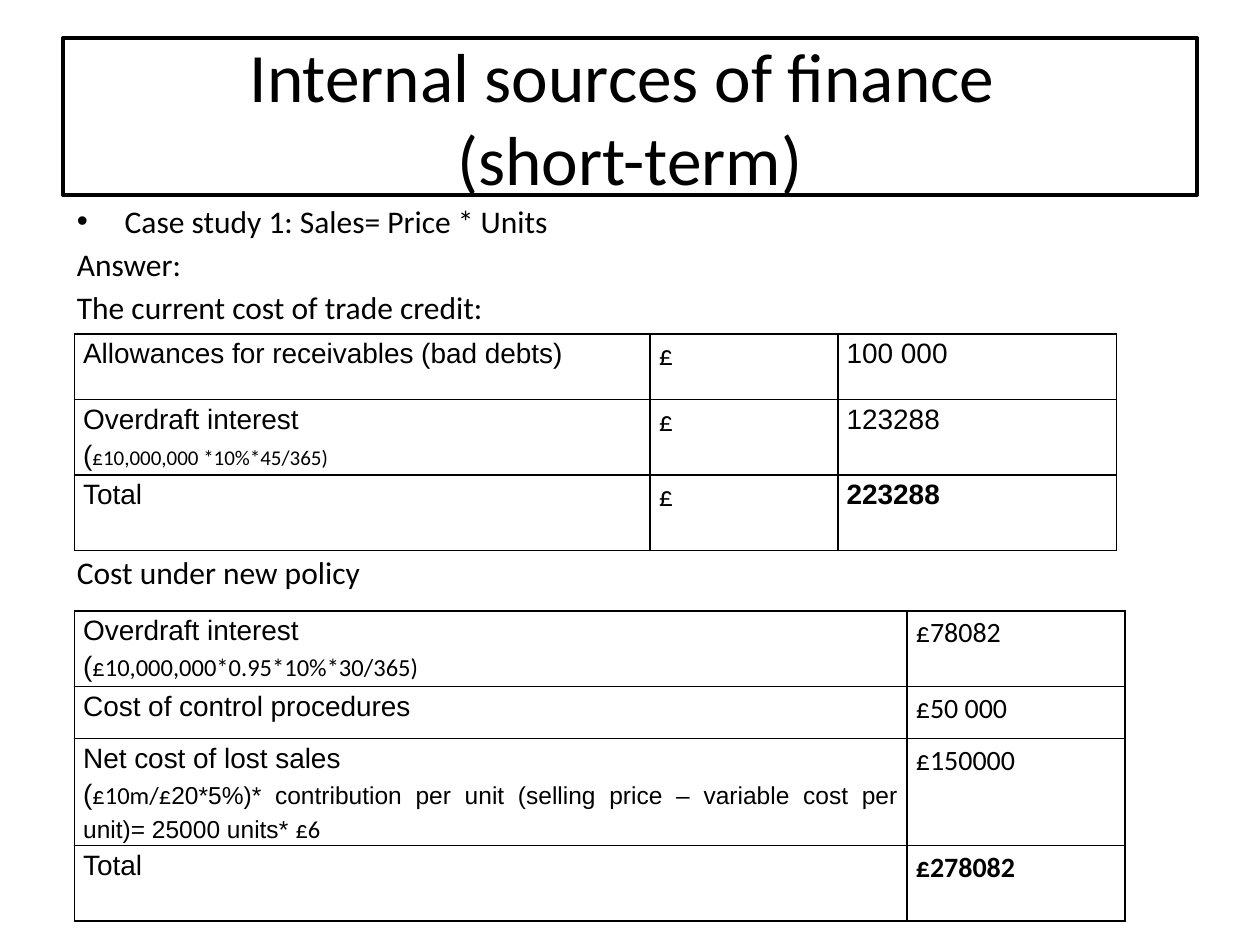
"""Build a slide comparing the cost of trade credit under the current and the new policy."""
from dataclasses import dataclass

import lxml.etree
import pptx
import pptx.dml.color
import pptx.enum.text
import pptx.oxml.ns
import pptx.util

GRID_COLUMNS, GRID_ROWS = 100, 75
CELL = pptx.util.Inches(0.1)
ALIGN = pptx.enum.text.PP_ALIGN
ANCHOR = pptx.enum.text.MSO_ANCHOR


@dataclass(frozen=True)
class Theme:
    ink: str = "000000"
    paper: str = "FFFFFF"
    body_font: str = "Calibri"
    label_font: str = "Arial"
    title_size: float = 39.6
    body_size: float = 18
    cell_size: float = 16
    note_size: float = 14
    small_size: float = 12
    frame_width: float = 2
    border_width: float = 1


THEME = Theme()


@dataclass(frozen=True)
class Area:
    left: float
    top: float
    width: float
    height: float


@dataclass(frozen=True)
class Span:
    text: str
    font: str = THEME.label_font
    size: float = THEME.cell_size
    bold: bool = False


@dataclass(frozen=True)
class BodyLine:
    text: str
    space_before: float = 3.2
    bullet: bool = False


@dataclass(frozen=True)
class CostTable:
    left: float
    top: float
    columns: tuple
    rows: tuple
    cells: tuple


def label(text: str, *notes: Span) -> tuple:
    """Return the lines of a label cell, with an optional bracketed working."""
    first = (Span(text),)
    return (first, (Span("("), *notes)) if notes else (first,)


def amount(text: str, font: str = THEME.body_font, bold: bool = False) -> tuple:
    """Return the single line of an amount cell."""
    return ((Span(text, font, bold=bold),),)


def note(text: str, font: str = THEME.body_font, size: float = THEME.note_size) -> Span:
    """Return a piece of a working."""
    return Span(text, font, size)


TITLE = "Internal sources of finance \v(short-term)"
TITLE_AREA = Area(5, 3, 90, 12.5)
BODY_AREA = Area(5.1, 15.5, 90, 49.5)
BODY = (
    BodyLine("Case study 1: Sales= Price * Units", bullet=True),
    BodyLine("Answer:"),
    BodyLine("The current cost of trade credit:"),
    BodyLine("Cost under new policy", space_before=129.4),
)
CURRENT_POLICY = CostTable(5.9, 26.5, (45.7, 14.9, 22.1), (5.2, 6, 6), (
    (label("Allowances for receivables (bad debts)"), amount("£"),
     amount("100 000", THEME.label_font)),
    (label("Overdraft interest ", note("£10,000,000 *10%*45/365)", size=THEME.small_size)),
     amount("£"), amount("123288", THEME.label_font)),
    (label("Total"), amount("£"), amount("223288", THEME.label_font, bold=True)),
))
NEW_POLICY = CostTable(5.9, 48.5, (66.1, 17.3), (6, 4.1, 8.5, 6), (
    (label("Overdraft interest ", note("£10,000,000*0.95*10%*30/365)")), amount("£78082")),
    (label("Cost of control procedures"), amount("£50 000")),
    (label("Net cost of lost sales ", note("£10m/£"),
           note("20*5%)* contribution per unit (selling price – variable cost per unit)"
                "= 25000 units* ", THEME.label_font),
           note("£6")), amount("£150000")),
    (label("Total"), amount("£278082", bold=True)),
))


def grid(count: float) -> int:
    """Convert grid columns or rows to a length."""
    return int(count * CELL)


def place(shape, area: Area) -> None:
    """Move a shape to an area of the grid."""
    shape.left, shape.top = grid(area.left), grid(area.top)
    shape.width, shape.height = grid(area.width), grid(area.height)


def write(para, text: str, *, font: str = THEME.body_font, size: float = THEME.body_size,
          bold: bool = False, color: str = THEME.ink) -> None:
    """Add formatted text to a paragraph, breaking the line at vertical tabs."""
    for number, part in enumerate(text.split("\v")):
        if number:
            para.add_line_break()
        span = para.add_run()
        span.text = part
        span.font.name, span.font.size, span.font.bold = font, pptx.util.Pt(size), bold
        span.font.color.rgb = pptx.dml.color.RGBColor.from_string(color)


def paragraphs(frame, count: int) -> list:
    """Return the given number of paragraphs of a text frame."""
    return [frame.paragraphs[0]] + [frame.add_paragraph() for _ in range(count - 1)]


def draw_title(title) -> None:
    """Fill and frame the title placeholder."""
    place(title, TITLE_AREA)
    title.fill.solid()
    title.fill.fore_color.rgb = pptx.dml.color.RGBColor.from_string(THEME.paper)
    title.line.color.rgb = pptx.dml.color.RGBColor.from_string(THEME.ink)
    title.line.width = pptx.util.Pt(THEME.frame_width)
    frame = title.text_frame
    frame.auto_size = pptx.enum.text.MSO_AUTO_SIZE.NONE
    frame.vertical_anchor = ANCHOR.MIDDLE
    para = frame.paragraphs[0]
    para.alignment = ALIGN.CENTER
    write(para, TITLE, size=THEME.title_size)


def draw_body(body) -> None:
    """Write the lines of the body placeholder."""
    place(body, BODY_AREA)
    frame = body.text_frame
    frame.auto_size = pptx.enum.text.MSO_AUTO_SIZE.NONE
    for para, line in zip(paragraphs(frame, len(BODY)), BODY):
        para.space_before = pptx.util.Pt(line.space_before)
        write(para, line.text)
        properties = para._p.get_or_add_pPr()
        properties.set("marL", str(grid(3.8)))
        properties.set("indent", str(-grid(3.8)))
        kind = "a:buChar" if line.bullet else "a:buNone"
        mark = lxml.etree.SubElement(properties, pptx.oxml.ns.qn(kind))
        if line.bullet:
            mark.set("char", "•")


def draw_borders(cell) -> None:
    """Rule all four sides of a table cell."""
    properties = cell._tc.get_or_add_tcPr()
    for index, side in enumerate(("a:lnL", "a:lnR", "a:lnT", "a:lnB")):
        border = lxml.etree.Element(pptx.oxml.ns.qn(side))
        border.set("w", str(pptx.util.Pt(THEME.border_width)))
        fill = lxml.etree.SubElement(border, pptx.oxml.ns.qn("a:solidFill"))
        lxml.etree.SubElement(fill, pptx.oxml.ns.qn("a:srgbClr")).set("val", THEME.ink)
        properties.insert(index, border)


def draw_cell(cell, lines: tuple) -> None:
    """Format a table cell and write its lines."""
    cell.fill.background()
    cell.margin_left = cell.margin_right = grid(0.7)
    cell.margin_top = cell.margin_bottom = 0
    cell.vertical_anchor = ANCHOR.TOP
    draw_borders(cell)
    for para, line in zip(paragraphs(cell.text_frame, len(lines)), lines):
        para.alignment = ALIGN.JUSTIFY
        para.line_spacing = 1.15
        for span in line:
            write(para, span.text, font=span.font, size=span.size, bold=span.bold)


def draw_table(page, costs: CostTable) -> None:
    """Add a ruled table of costs."""
    table = page.shapes.add_table(
        len(costs.rows), len(costs.columns), grid(costs.left), grid(costs.top),
        grid(sum(costs.columns)), grid(sum(costs.rows))).table
    table.first_row = table.horz_banding = False
    for column, width in zip(table.columns, costs.columns):
        column.width = grid(width)
    for row, height, contents in zip(table.rows, costs.rows, costs.cells):
        row.height = grid(height)
        for cell, lines in zip(row.cells, contents):
            draw_cell(cell, lines)


def main() -> None:
    """Build and save the deck."""
    deck = pptx.Presentation()
    deck.slide_width, deck.slide_height = grid(GRID_COLUMNS), grid(GRID_ROWS)
    page = deck.slides.add_slide(deck.slide_layouts[1])
    draw_title(page.shapes.title)
    draw_body(page.placeholders[1])
    for costs in (CURRENT_POLICY, NEW_POLICY):
        draw_table(page, costs)
    deck.save("out.pptx")


if __name__ == "__main__":
    main()
